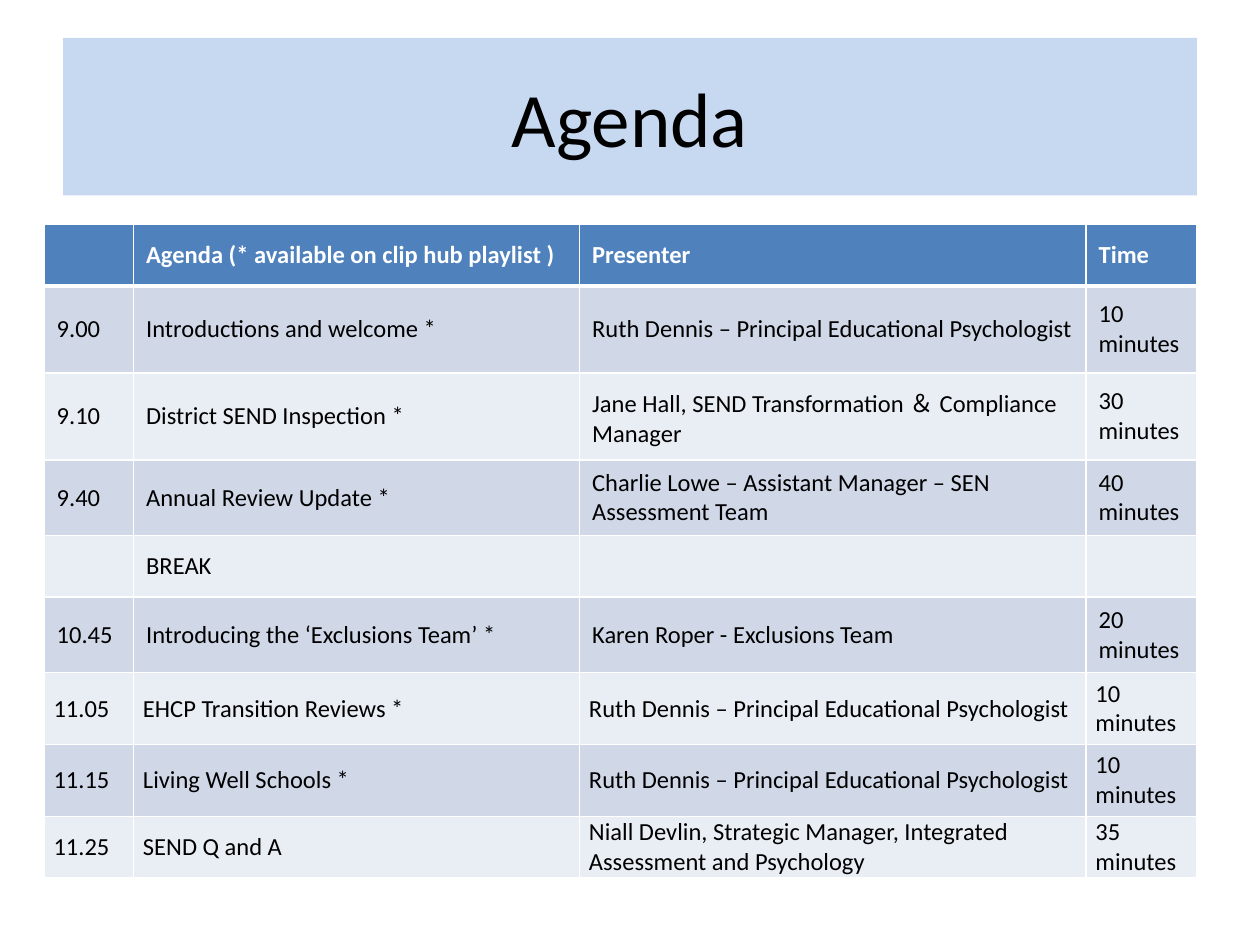
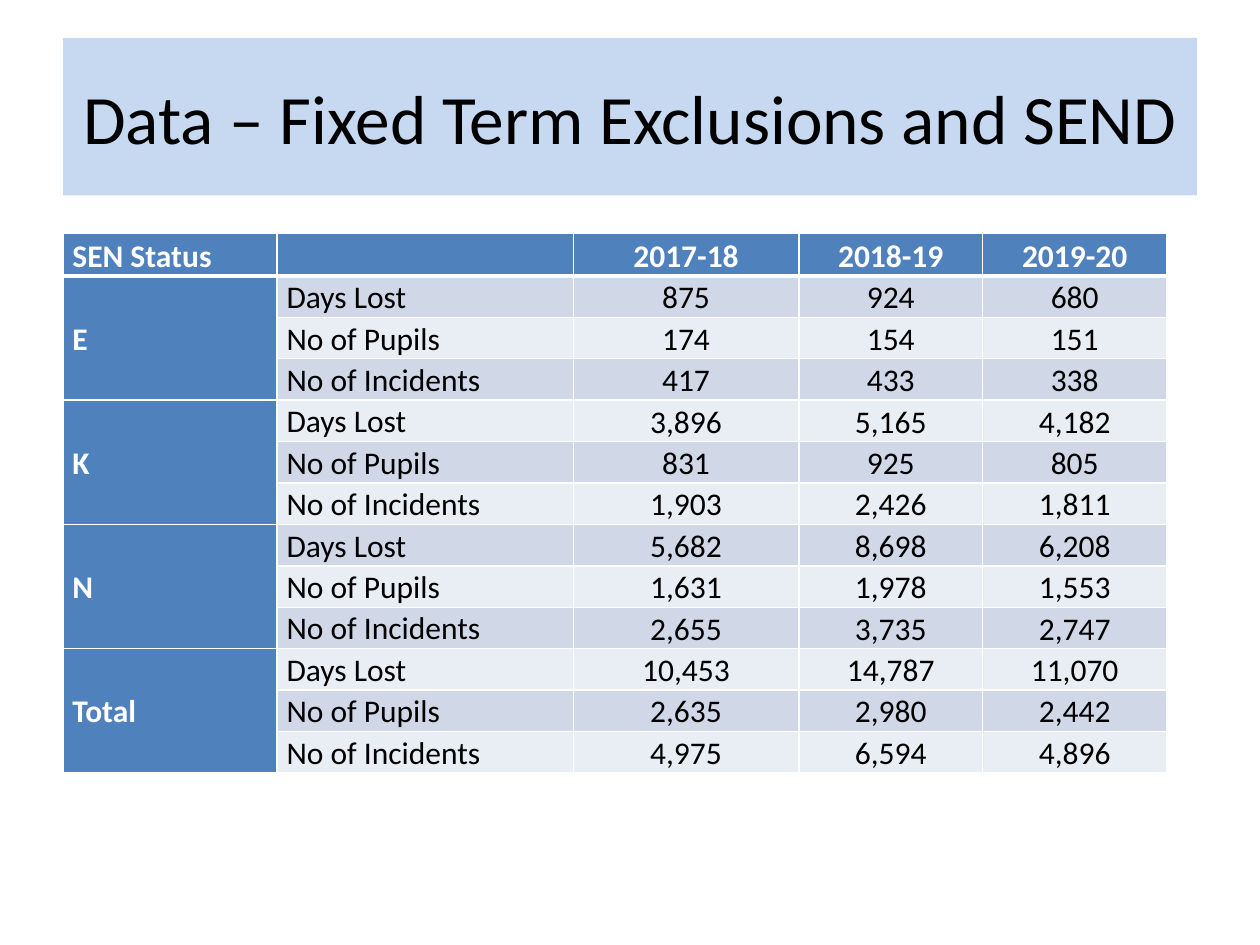
from dataclasses import dataclass

import pptx
import pptx.dml.color
import pptx.enum.text
import pptx.oxml
import pptx.oxml.ns
import pptx.util

ALIGN = pptx.enum.text.PP_ALIGN
ANCHOR = pptx.enum.text.MSO_ANCHOR
GRID_COLUMNS, GRID_ROWS = 100, 75
TITLE_ONLY_LAYOUT = 5


@dataclass(frozen=True)
class Theme:
    font: str = "Calibri"
    title_band: str = "C6D9F1"
    header: str = "4F81BD"
    bands: tuple = ("D0D8E8", "E9EDF4")
    white: str = "FFFFFF"
    black: str = "000000"
    title_size: float = 44
    long_title_size: float = 39.6
    agenda_size: float = 14
    data_size: float = 18
    border: float = 1
    header_border: float = 3


def color(value):
    return pptx.dml.color.RGBColor.from_string(value)


class Deck:
    def __init__(self, theme):
        self.theme = theme
        self.presentation = pptx.Presentation()
        self.presentation.slide_width = pptx.util.Inches(10)
        self.presentation.slide_height = pptx.util.Inches(7.5)
        self.slide = None

    def across(self, columns):
        return round(self.presentation.slide_width * columns / GRID_COLUMNS)

    def down(self, rows):
        return round(self.presentation.slide_height * rows / GRID_ROWS)

    def add_slide(self, title, size):
        layout = self.presentation.slide_layouts[TITLE_ONLY_LAYOUT]
        self.slide = self.presentation.slides.add_slide(layout)
        band = self.slide.shapes.title
        band.left, band.top = self.across(5), self.down(3)
        band.width, band.height = self.across(90), self.down(12.5)
        band.fill.solid()
        band.fill.fore_color.rgb = color(self.theme.title_band)
        frame = band.text_frame
        frame.text = title
        frame.auto_size = pptx.enum.text.MSO_AUTO_SIZE.NONE
        frame.vertical_anchor = ANCHOR.MIDDLE
        self.format_text(frame, size, self.theme.black, False, ALIGN.CENTER)

    def format_text(self, frame, size, text_color, bold, align):
        for paragraph in frame.paragraphs:
            paragraph.alignment = align
            for run in paragraph.runs:
                run.font.name = self.theme.font
                run.font.size = pptx.util.Pt(size)
                run.font.bold = bold
                run.font.color.rgb = color(text_color)

    def add_table(self, left, top, widths, heights):
        """Place an empty table; all lengths are in grid units."""
        table = self.slide.shapes.add_table(
            len(heights), len(widths), self.across(left), self.down(top),
            self.across(sum(widths)), self.down(sum(heights))).table
        for column, width in zip(table.columns, widths):
            column.width = self.across(width)
        for row, height in zip(table.rows, heights):
            row.height = self.down(height)
        return table

    def border_cell(self, cell, row):
        """Rule all four sides, heavier between the header and the body."""
        properties = cell._tc.get_or_add_tcPr()
        heavy_side = {0: "B", 1: "T"}.get(row)
        for side in "LRTB":
            width = self.theme.header_border if side == heavy_side else self.theme.border
            properties.append(pptx.oxml.parse_xml(
                f'<a:ln{side} {pptx.oxml.ns.nsdecls("a")} w="{pptx.util.Pt(width)}">'
                f'<a:solidFill><a:srgbClr val="{self.theme.white}"/></a:solidFill>'
                f'</a:ln{side}>'))

    def fill_cell(self, table, row, column, text, size, heading=False,
                  align=ALIGN.LEFT, anchor=ANCHOR.MIDDLE, compact=False, spacing=None):
        cell = table.cell(row, column)
        self.border_cell(cell, row)
        cell.fill.solid()
        cell.fill.fore_color.rgb = color(
            self.theme.header if heading else self.theme.bands[(row - 1) % 2])
        cell.vertical_anchor = anchor
        if compact:
            cell.margin_left = cell.margin_right = self.across(0.75)
            cell.margin_top = cell.margin_bottom = 0
        cell.text_frame.text = text
        text_color = self.theme.white if heading else self.theme.black
        self.format_text(cell.text_frame, size, text_color, heading, align)
        if spacing:
            cell.text_frame.paragraphs[0].line_spacing = spacing


PSYCHOLOGIST = "Ruth Dennis – Principal Educational Psychologist"
AGENDA = [
    ("", "Agenda (* available on clip hub playlist )", "Presenter", "Time"),
    ("9.00", "Introductions and welcome *", PSYCHOLOGIST, "10 minutes"),
    ("9.10", "District SEND Inspection *",
     "Jane Hall, SEND Transformation ＆ Compliance Manager", "30 minutes"),
    ("9.40", "Annual Review Update *",
     "Charlie Lowe – Assistant Manager – SEN Assessment Team", "40 minutes"),
    ("", "BREAK", "", ""),
    ("10.45", "Introducing the ‘Exclusions Team’ *", "Karen Roper - Exclusions Team",
     "20 minutes"),
    ("11.05", "EHCP Transition Reviews *", PSYCHOLOGIST, "10 minutes"),
    ("11.15", "Living Well Schools *", PSYCHOLOGIST, "10 minutes"),
    ("11.25", "SEND Q and A",
     "Niall Devlin, Strategic Manager, Integrated Assessment and Psychology", "35 minutes"),
]
FIRST_COMPACT_ROW = 6

YEARS = ("2017-18", "2018-19", "2019-20")
MEASURES = ("Days Lost", "No of Pupils", "No of Incidents")
EXCLUSIONS = {
    "E": [(875, 924, 680), (174, 154, 151), (417, 433, 338)],
    "K": [(3896, 5165, 4182), (831, 925, 805), (1903, 2426, 1811)],
    "N": [(5682, 8698, 6208), (1631, 1978, 1553), (2655, 3735, 2747)],
    "Total": [(10453, 14787, 11070), (2635, 2980, 2442), (4975, 6594, 4896)],
}


def build_agenda(deck):
    deck.add_slide("Agenda", deck.theme.title_size)
    table = deck.add_table(3.5, 17.8, (7.1, 35.4, 40.2, 8.75),
                           (4.9, 6.9, 6.9, 6, 4.9, 6, 5.7, 5.7, 4.9))
    for row, texts in enumerate(AGENDA):
        for column, text in enumerate(texts):
            deck.fill_cell(table, row, column, text, deck.theme.agenda_size,
                           heading=row == 0, compact=row >= FIRST_COMPACT_ROW)


def build_exclusions(deck):
    deck.add_slide("Data – Fixed Term Exclusions and SEND", deck.theme.long_title_size)
    rows = [("SEN Status", "", *YEARS)]
    for status, measures in EXCLUSIONS.items():
        for index, (measure, values) in enumerate(zip(MEASURES, measures)):
            rows.append((status if index == 0 else "", measure,
                         *(f"{value:,}" for value in values)))
    table = deck.add_table(5, 18.5, (17, 23.5, 17.9, 14.6, 14.6),
                           [3.4] + [3.29] * (len(rows) - 1))
    table.first_col = True
    for row, texts in enumerate(rows):
        for column, text in enumerate(texts):
            if row == 0:
                anchor = ANCHOR.BOTTOM
            else:
                anchor = ANCHOR.TOP if column == 1 else ANCHOR.MIDDLE
            deck.fill_cell(table, row, column, text, deck.theme.data_size,
                           heading=row == 0 or column == 0,
                           align=ALIGN.CENTER if column > 1 else ALIGN.LEFT,
                           anchor=anchor, compact=True, spacing=1.07)
    for first in range(1, len(rows), len(MEASURES)):
        table.cell(first, 0).merge(table.cell(first + len(MEASURES) - 1, 0))


def main():
    deck = Deck(Theme())
    build_agenda(deck)
    build_exclusions(deck)
    deck.presentation.save("out.pptx")


if __name__ == "__main__":
    main()
